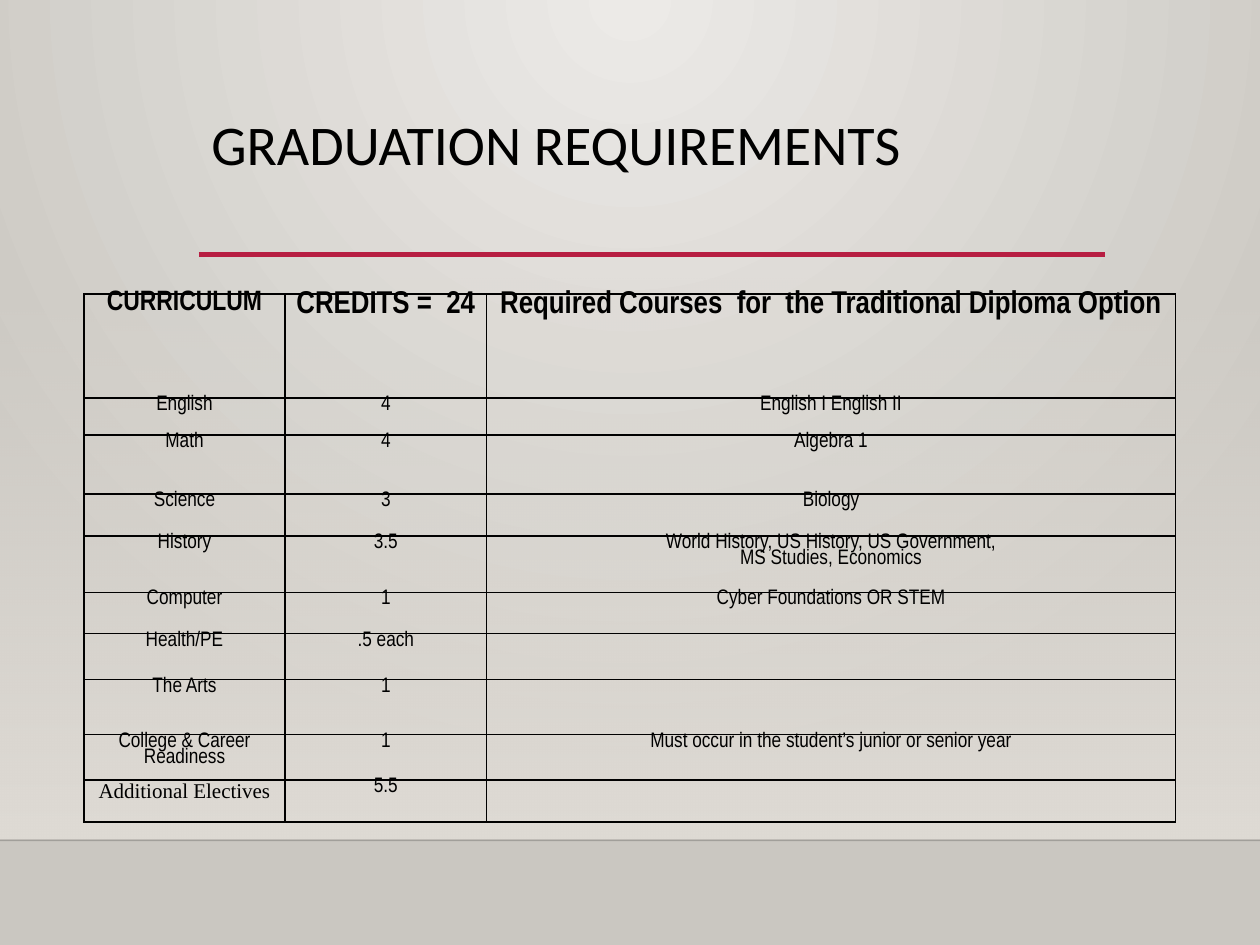
from dataclasses import dataclass

from lxml import etree
from pptx import Presentation
from pptx.dml.color import RGBColor
from pptx.enum.shapes import MSO_CONNECTOR, MSO_SHAPE
from pptx.enum.text import MSO_ANCHOR, PP_ALIGN
from pptx.oxml.ns import qn
from pptx.util import Cm, Pt

STRAIGHT = MSO_CONNECTOR.STRAIGHT
RECTANGLE = MSO_SHAPE.RECTANGLE
TOP = MSO_ANCHOR.TOP
LEFT = PP_ALIGN.LEFT
CENTER = PP_ALIGN.CENTER

BLACK = RGBColor(0x00, 0x00, 0x00)
CRIMSON = RGBColor(0xB7, 0x1E, 0x42)
GLOW = RGBColor(0xEC, 0xEA, 0xE7)
STONE = RGBColor(0xCA, 0xC7, 0xC1)
SAND = RGBColor(0xDF, 0xDB, 0xD5)

NARROW = "Arial Narrow"
SERIF = "Times New Roman"
COLUMN_WIDTHS = (4.06, 4.06, 13.89)
HEADER_SIZES = (16, 18, 18)


@dataclass
class Row:
    height: float
    curriculum: str
    credits: str
    courses: str = ""


@dataclass
class Rule:
    left: float
    right: float
    y: float
    color: RGBColor
    weight: float
    opacity: int = 100


ROWS = (
    Row(2.09, "CURRICULUM", "CREDITS =  24",
        "Required Courses  for  the Traditional Diploma Option"),
    Row(0.75, "English", "4", "English I English II"),
    Row(1.19, "Math", "4", "Algebra 1"),
    Row(0.85, "Science", "3", "Biology"),
    Row(1.13, "History", "3.5",
        "World History, US History, US Government,\nMS Studies, Economics"),
    Row(0.83, "Computer", "1", "Cyber Foundations OR STEM"),
    Row(0.93, "Health/PE", ".5 each"),
    Row(1.11, "The Arts", "1"),
    Row(0.91, "College & Career Readiness", "1",
        "Must occur in the student’s junior or senior year"),
    Row(0.85, "Additional Electives", "5.5"),
)

RULES = (
    Rule(0, 25.4, 16.94, BLACK, 1, 20),
    Rule(4.01, 22.28, 5.13, CRIMSON, 2.5),
)


def write(frame, text: str, *, font: str, size: float, bold: bool = False,
          align=LEFT, spacing: float = 1.0) -> None:
    for index, line in enumerate(text.split("\n")):
        para = frame.add_paragraph() if index else frame.paragraphs[0]
        para.alignment = align
        para.line_spacing = spacing
        span = para.add_run()
        span.text = line
        span.font.name = font
        span.font.size = Pt(size)
        span.font.bold = bold
        span.font.color.rgb = BLACK


def set_opacity(color_node, percent: int) -> None:
    etree.SubElement(color_node, qn("a:alpha"), val=str(percent * 1000))


def set_stops(fill, first: RGBColor, last: RGBColor) -> None:
    fill.gradient()
    for stop, color, position in zip(fill.gradient_stops, (first, last), (0, 1)):
        stop.color.rgb = color
        stop.position = position


def paint_background(page) -> None:
    set_stops(page.background.fill, GLOW, STONE)
    gradient = page.element.find(".//" + qn("a:gradFill"))
    gradient.remove(gradient.find(qn("a:lin")))
    circle = etree.SubElement(gradient, qn("a:path"), path="circle")
    etree.SubElement(circle, qn("a:fillToRect"),
                     l="43000", t="0", r="43000", b="100000")


def add_wall_fade(page) -> None:
    wall = page.shapes.add_shape(RECTANGLE, 0, Cm(5.59), Cm(25.4), Cm(11.33))
    wall.shadow.inherit = False
    wall.line.fill.background()
    set_stops(wall.fill, SAND, SAND)
    wall.fill.gradient_angle = 270
    colors = wall.element.spPr.findall(".//" + qn("a:srgbClr"))
    for color_node, opacity in zip(colors, (0, 100)):
        set_opacity(color_node, opacity)


def add_rule(page, rule: Rule) -> None:
    line = page.shapes.add_connector(
        STRAIGHT, Cm(rule.left), Cm(rule.y), Cm(rule.right), Cm(rule.y))
    line.line.color.rgb = rule.color
    line.line.width = Pt(rule.weight)
    properties = line.element.spPr
    if rule.opacity < 100:
        set_opacity(properties.find(".//" + qn("a:srgbClr")), rule.opacity)
    etree.SubElement(properties, qn("a:effectLst"))


def add_title(page, text: str) -> None:
    box = page.shapes.add_textbox(Cm(4.01), Cm(2.24), Cm(18.26), Cm(2.92))
    box.text_frame.word_wrap = True
    box.text_frame.vertical_anchor = TOP
    write(box.text_frame, text, font="Calibri", size=32, spacing=0.9)


def add_borders(cell) -> None:
    properties = cell._tc.get_or_add_tcPr()
    for index, side in enumerate(("lnL", "lnR", "lnT", "lnB")):
        border = etree.Element(qn(f"a:{side}"), w=str(Pt(1)))
        fill = etree.SubElement(border, qn("a:solidFill"))
        etree.SubElement(fill, qn("a:srgbClr"), val=str(BLACK))
        properties.insert(index, border)


def add_requirements(page) -> None:
    frame = page.shapes.add_table(
        len(ROWS), len(COLUMN_WIDTHS), Cm(1.69), Cm(5.93),
        Cm(sum(COLUMN_WIDTHS)), Cm(sum(row.height for row in ROWS)))
    table = frame.table
    table.first_row = False
    table.horz_banding = False
    for column, width in zip(table.columns, COLUMN_WIDTHS):
        column.width = Cm(width)
    for row_index, row in enumerate(ROWS):
        table.rows[row_index].height = Cm(row.height)
        header = row_index == 0
        for column_index, text in enumerate((row.curriculum, row.credits, row.courses)):
            cell = table.cell(row_index, column_index)
            cell.fill.background()
            cell.margin_left = cell.margin_right = Cm(0.18)
            cell.margin_top = cell.margin_bottom = 0
            add_borders(cell)
            if text:
                serif = text == "Additional Electives"
                write(cell.text_frame, text, font=SERIF if serif else NARROW,
                      size=HEADER_SIZES[column_index] if header else 12,
                      bold=header, align=CENTER, spacing=1.0 if serif else 0.8)


def main() -> None:
    deck = Presentation()
    deck.slide_width = Cm(25.4)
    deck.slide_height = Cm(19.05)
    page = deck.slides.add_slide(deck.slide_layouts[6])
    paint_background(page)
    add_wall_fade(page)
    for rule in RULES:
        add_rule(page, rule)
    add_title(page, "GRADUATION REQUIREMENTS")
    add_requirements(page)
    deck.save("out.pptx")


if __name__ == "__main__":
    main()
